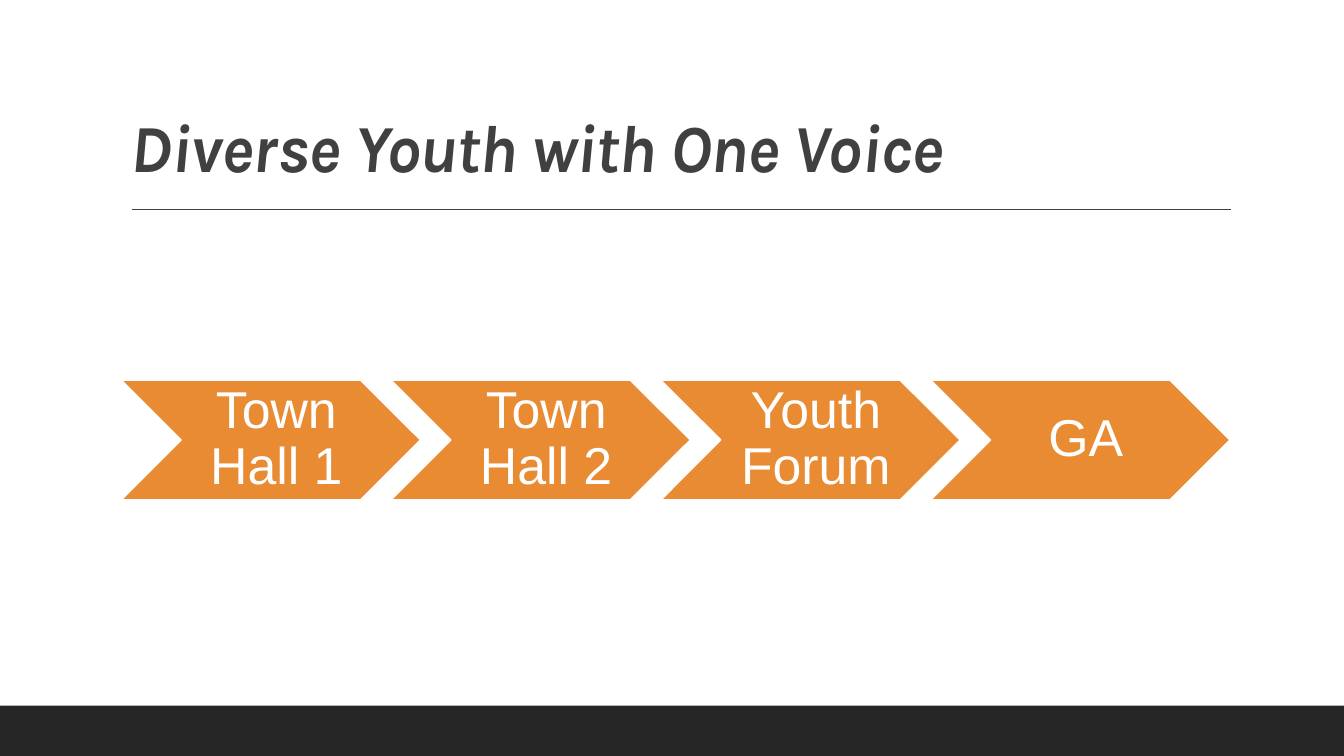
from pptx import Presentation
from pptx import util as u
from pptx.dml.color import RGBColor
from pptx.enum import shapes, text
from lxml import etree

COLORS = {"ink": "404040", "footer": "262626", "step": "E88B33", "white": "FFFFFF"}
STEPS = ["Town Hall 1", "Town Hall 2", "Youth Forum", "GA"]
DRAWING_NS = "{http://schemas.openxmlformats.org/drawingml/2006/main}"
WIDTH, HEIGHT = 13.33, 7.5


def rgb(name):
    return RGBColor.from_string(COLORS[name])


def place(box):
    return [u.Inches(length) for length in box]


def add_block(slide, kind, box, fill):
    shape = slide.shapes.add_shape(kind, *place(box))
    shape.shadow.inherit = False
    shape.fill.solid()
    shape.fill.fore_color.rgb = rgb(fill)
    shape.line.fill.background()
    return shape


def write(shape, words, font_name, size, color, anchor):
    """Set one wrapped paragraph and return it."""
    frame = shape.text_frame
    frame.text = words
    frame.word_wrap = True
    frame.vertical_anchor = anchor
    paragraph = frame.paragraphs[0]
    paragraph.line_spacing = 0.9
    font = paragraph.runs[0].font
    font.name, font.size = font_name, u.Pt(size)
    font.color.rgb = rgb(color)
    return paragraph


def add_title(slide, box, words):
    left, top, width, height = box
    title = slide.shapes.add_textbox(*place(box))
    paragraph = write(title, words, "Karla", 48, "ink", text.MSO_ANCHOR.BOTTOM)
    font = paragraph.runs[0].font
    font.bold = font.italic = True
    paragraph.runs[0]._r.get_or_add_rPr().set("spc", "-50")

    # Rule below the title
    rule_left, rule_top = left + 0.11, top + height + 0.18
    rule = slide.shapes.add_connector(
        shapes.MSO_CONNECTOR.STRAIGHT,
        *place((rule_left, rule_top, rule_left + 10.9, rule_top)))
    rule.line.color.rgb = rgb("ink")
    rule.line.width = u.Pt(1)
    etree.SubElement(rule._element.spPr, DRAWING_NS + "effectLst")


def add_process(slide, box, steps):
    """Chevrons overlap their neighbours' space by a tenth of their width."""
    left, top, width, height = box
    step_width = width / (0.9 * (len(steps) - 1) + 1)
    for index, step in enumerate(steps):
        chevron = add_block(
            slide, shapes.MSO_SHAPE.CHEVRON,
            (left + index * 0.9 * step_width, top, step_width, height), "step")
        chevron.line.color.rgb = rgb("white")
        chevron.line.width = u.Pt(1.25)
        frame = chevron.text_frame
        frame.margin_left = u.Inches(0.16)
        frame.margin_right = frame.margin_top = frame.margin_bottom = u.Inches(0.05)
        paragraph = write(chevron, step, "Arial", 37, "white", text.MSO_ANCHOR.MIDDLE)
        paragraph.alignment = text.PP_ALIGN.CENTER


def main():
    presentation = Presentation()
    presentation.slide_width, presentation.slide_height = place((WIDTH, HEIGHT))
    slide = presentation.slides.add_slide(presentation.slide_layouts[6])

    # Footer band
    add_block(slide, shapes.MSO_SHAPE.RECTANGLE, (0, HEIGHT - 0.5, WIDTH, 0.5), "footer")
    # Heading and process
    add_title(slide, (1.2, 0.31, 11, 1.59), "Diverse Youth with One Voice")
    add_process(slide, (1.2, 3.77, 11, 1.19), STEPS)

    presentation.save("out.pptx")


if __name__ == "__main__":
    main()
